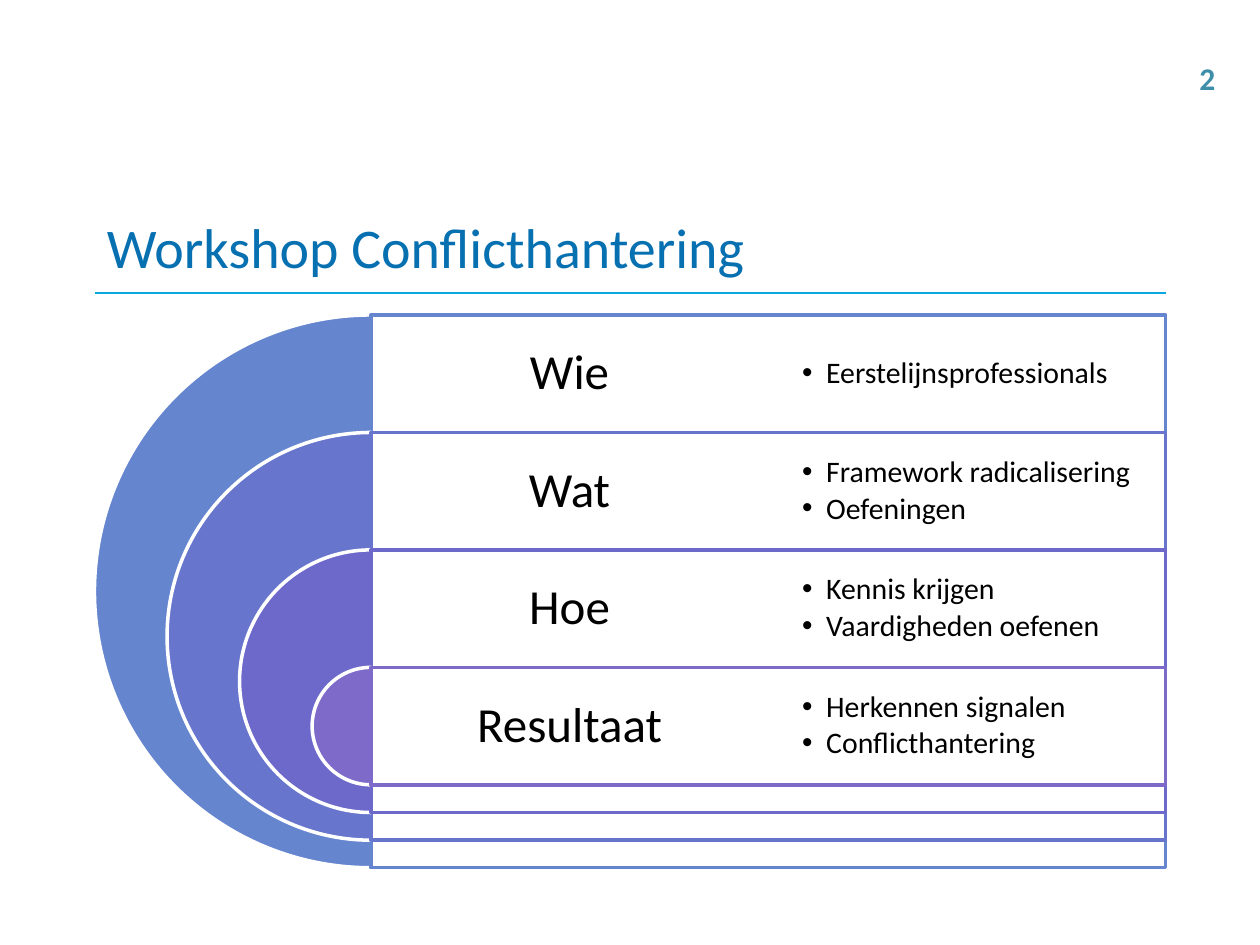
from dataclasses import dataclass

from lxml import etree
from pptx import Presentation
from pptx.dml.color import RGBColor
from pptx.enum.shapes import MSO_CONNECTOR, MSO_SHAPE as Preset
from pptx.enum.text import MSO_ANCHOR as Anchor, PP_ALIGN as Align
from pptx.oxml.ns import qn
from pptx.util import Inches, Pt

WIDTH, HEIGHT = 10, 7.5


@dataclass(frozen=True)
class Theme:
    font: str = "Calibri"
    title: str = "0770B1"
    rule: str = "0BA7DF"
    number: str = "3E8EA9"
    ink: str = "000000"
    paper: str = "FFFFFF"
    rings: tuple = ("6585CF", "6775CD", "6C69CB", "7E6BC9")
    title_size: int = 32
    label_size: int = 28
    bullet_size: int = 17
    number_size: int = 18
    outline: float = 2
    hairline: float = 0.75


class SlideBuilder:
    """Draws on one slide; lengths are shares of its width and height."""

    def __init__(self, slide, theme):
        self.slide = slide
        self.theme = theme

    def frame(self, left, top, width, height):
        return (Inches(left * WIDTH), Inches(top * HEIGHT),
                Inches(width * WIDTH), Inches(height * HEIGHT))

    def shape(self, preset, frame, fill, line, opacity=None):
        shape = self.slide.shapes.add_shape(preset, *self.frame(*frame))
        shape.shadow.inherit = False
        shape.fill.solid()
        shape.fill.fore_color.rgb = RGBColor.from_string(fill)
        shape.line.color.rgb = RGBColor.from_string(line)
        shape.line.width = Pt(self.theme.outline)
        if opacity is not None:
            color = shape.fill._xPr.find(qn("a:solidFill"))[0]
            etree.SubElement(color, qn("a:alpha"), val=str(opacity * 1000))
        return shape

    def half_disc(self, frame, fill):
        shape = self.shape(Preset.PIE, frame, fill, self.theme.paper)
        # From 90 to 270 degrees: the left half
        shape.adjustments[0], shape.adjustments[1] = 54, 162

    def rule(self, left, right, y):
        x, y, length, _ = self.frame(left, y, right - left, 0)
        line = self.slide.shapes.add_connector(
            MSO_CONNECTOR.STRAIGHT, x, y, x + length, y)
        line.line.color.rgb = RGBColor.from_string(self.theme.rule)
        line.line.width = Pt(self.theme.hairline)
        etree.SubElement(line._element.spPr, qn("a:effectLst"))

    def text(self, frame, lines, size, color, align=Align.LEFT, bold=False,
             anchor=Anchor.MIDDLE, inset=None, spacing=None, after=0,
             bullets=False, wrap=True):
        box = self.slide.shapes.add_textbox(*self.frame(*frame)).text_frame
        box.word_wrap = wrap
        box.vertical_anchor = anchor
        if inset is not None:
            box.margin_left = box.margin_right = Inches(inset)
            box.margin_top = box.margin_bottom = Inches(inset)
        for index, words in enumerate(lines):
            paragraph = box.add_paragraph() if index else box.paragraphs[0]
            paragraph.alignment = align
            paragraph.line_spacing = spacing
            paragraph.space_after = Pt(after)
            if bullets:
                self.bullet(paragraph)
            run = paragraph.add_run()
            run.text = words
            run.font.name = self.theme.font
            run.font.size = Pt(size)
            run.font.bold = bold
            run.font.color.rgb = RGBColor.from_string(color)

    def bullet(self, paragraph):
        properties = paragraph._p.get_or_add_pPr()
        properties.set("lvl", "1")
        properties.set("marL", str(Inches(0.19)))
        properties.set("indent", str(-Inches(0.19)))
        etree.SubElement(properties, qn("a:buFont"), typeface="Arial")
        etree.SubElement(properties, qn("a:buChar"), char="•")


ROWS = (
    ("Wie", ["Eerstelijnsprofessionals"]),
    ("Wat", ["Framework radicalisering", "Oefeningen"]),
    ("Hoe", ["Kennis krijgen", "Vaardigheden oefenen"]),
    ("Resultaat", ["Herkennen signalen", "Conflicthantering"]),
)


def main():
    presentation = Presentation()
    presentation.slide_width = Inches(WIDTH)
    presentation.slide_height = Inches(HEIGHT)
    slide = presentation.slides.add_slide(presentation.slide_layouts[6])
    theme = Theme()
    builder = SlideBuilder(slide, theme)

    # Title with its rule
    left, right = 0.075, 0.925
    builder.rule(left, right, 0.31)
    builder.text((left, 0.21, right - left, 0.1), ["Workshop Conflicthantering"],
                 theme.title_size, theme.title)

    # Diagram grid: 80 units high, four rows of 17 and three rims of 4
    top, diagram = 1 / 3, 0.585
    unit = diagram / 80
    row, rim = 17 * unit, 4 * unit
    aspect = HEIGHT / WIDTH
    axis = left + diagram * aspect / 2
    column = (right - axis) / 2

    # Nested half discs, frames and row labels
    for index, ((label, _), color) in enumerate(zip(ROWS, theme.rings)):
        y = top + index * row
        size = diagram - index * (row + rim)
        disc = size * aspect
        builder.half_disc((axis - disc / 2, y, disc, size), color)
        builder.shape(Preset.RECTANGLE, (axis, y, right - axis, size),
                      theme.paper, color, opacity=90)
        builder.text((axis, y, column, row), [label], theme.label_size,
                     theme.ink, align=Align.CENTER, inset=0.12, spacing=0.9)

    # Bulleted details
    for index, (_, details) in enumerate(ROWS):
        builder.text((axis + column, top + index * row, column, row), details,
                     theme.bullet_size, theme.ink, inset=0.27, spacing=0.9,
                     after=2.5, bullets=True)

    # Page number
    builder.text((0.942, 0.056, 0.033, 0.053), ["2"], theme.number_size,
                 theme.number, bold=True, anchor=Anchor.TOP, wrap=False)

    presentation.save("out.pptx")


if __name__ == "__main__":
    main()
